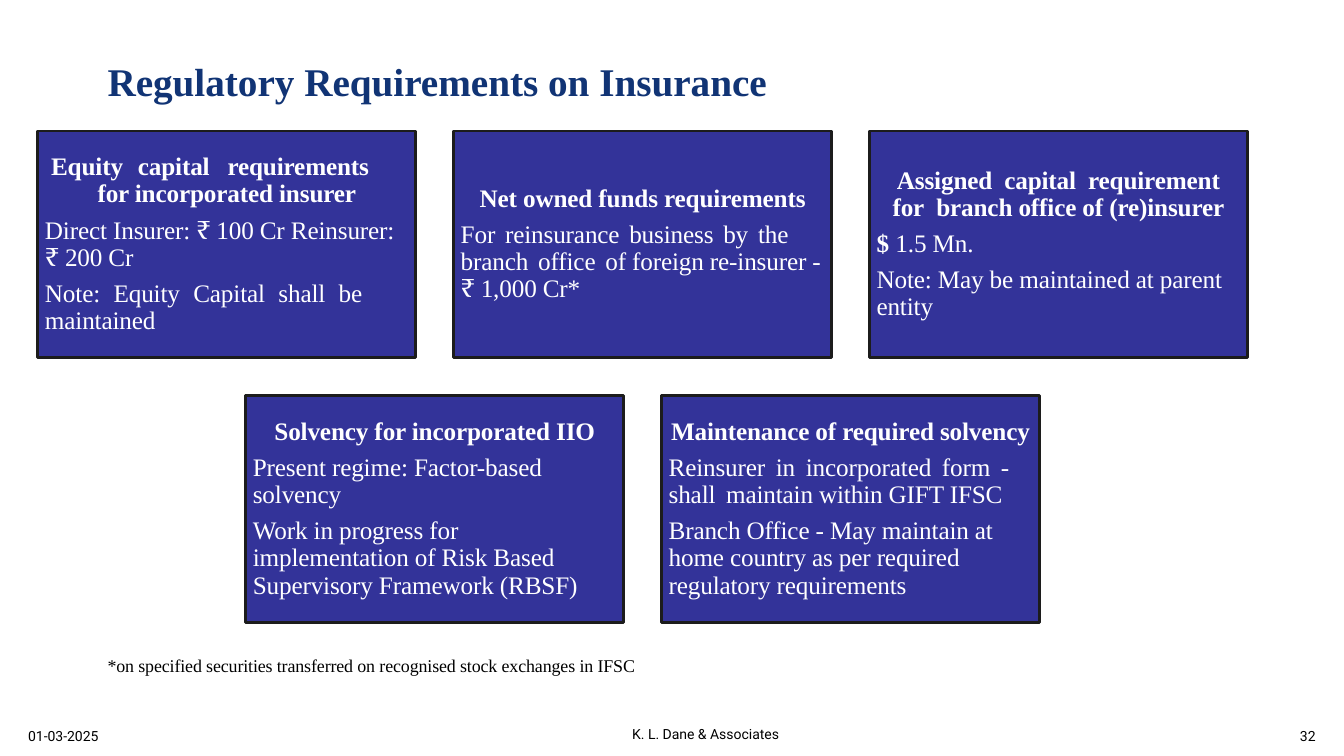
from dataclasses import dataclass

from pptx import Presentation
from pptx.dml.color import RGBColor
from pptx.enum.shapes import MSO_SHAPE
from pptx.enum.text import MSO_ANCHOR, PP_ALIGN
from pptx.util import Pt

LEFT, CENTER, RIGHT = PP_ALIGN.LEFT, PP_ALIGN.CENTER, PP_ALIGN.RIGHT
TOP, MIDDLE, BOTTOM = MSO_ANCHOR.TOP, MSO_ANCHOR.MIDDLE, MSO_ANCHOR.BOTTOM
RECTANGLE = MSO_SHAPE.RECTANGLE


@dataclass(frozen=True)
class Theme:
    """Colours, fonts and type sizes of the slide."""
    navy: str = "113475"
    card: str = "333399"
    border: str = "1C1C1C"
    white: str = "FFFFFF"
    black: str = "000000"
    serif: str = "Times New Roman"
    sans: str = "Roboto"
    title_size: float = 28
    card_size: float = 18
    note_size: float = 12.8
    footer_size: float = 10


@dataclass(frozen=True)
class Entry:
    """A card paragraph: bold lead, loosely spaced words, then plain words."""
    text: str = ""
    loose: str = ""
    gap: float = 0
    lead: str = ""
    tabs: tuple = ()


CARD_ROWS = [
    [
        [Entry("for incorporated insurer", "Equity\tcapital\trequirements\t", tabs=(62, 126, 251)),
         Entry("Direct Insurer: ₹ 100 Cr Reinsurer: ₹ 200 Cr"),
         Entry("maintained", "Note: Equity Capital shall be ", 5)],
        [Entry("Net owned funds requirements"),
         Entry("of foreign re-insurer - ₹ 1,000 Cr*",
               "For reinsurance business by the branch office ", 2.4)],
        [Entry("branch office of (re)insurer", "Assigned capital requirement for ", 4),
         Entry("1.5 Mn.", lead="$ "),
         Entry("Note: May be maintained at parent entity")],
    ],
    [
        [Entry("Solvency for incorporated IIO"),
         Entry("Present regime: Factor-based solvency"),
         Entry("Work in progress for implementation of Risk Based Supervisory Framework (RBSF)")],
        [Entry("Maintenance of required solvency"),
         Entry("maintain within GIFT IFSC", "Reinsurer in incorporated form - shall ", 3),
         Entry("Branch Office - May maintain at home country as per required "
               "regulatory requirements")],
    ],
]
CARD_WIDTH, CARD_HEIGHT, CARD_GAP = 270, 162, 27
CARDS_LEFT, CARDS_TOP = 27, 93.6


def add_text(paragraph, text, *, font, size, color, bold=False, tracking=0):
    """Append a formatted run to the paragraph."""
    run = paragraph.add_run()
    run.text = text
    run.font.name = font
    run.font.size = Pt(size)
    run.font.bold = bold
    run.font.color.rgb = RGBColor.from_string(color)
    if tracking:
        run._r.get_or_add_rPr().set("spc", str(round(tracking * 100)))


def set_tabs(paragraph, positions):
    """Give the paragraph left tab stops at the positions."""
    properties = paragraph._p.get_or_add_pPr()
    stops = properties.makeelement(properties.tag.replace("pPr", "tabLst"), {})
    for position in positions:
        stop = stops.makeelement(properties.tag.replace("pPr", "tab"),
                                 {"pos": str(Pt(position)), "algn": "l"})
        stops.append(stop)
    properties.append(stops)


class SlideBuilder:
    """Draws the elements of one slide in one theme."""

    def __init__(self, slide, theme):
        """Keep the slide and its theme."""
        self.slide = slide
        self.theme = theme

    def label(self, text, box, *, align=LEFT, anchor=TOP, insets=(7.2, 3.6, 7.2, 3.6), **style):
        """Add a text box holding one paragraph."""
        frame = self.slide.shapes.add_textbox(*map(Pt, box)).text_frame
        frame.word_wrap = True
        frame.vertical_anchor = anchor
        self.inset(frame, insets)
        frame.paragraphs[0].alignment = align
        add_text(frame.paragraphs[0], text, **style)

    def inset(self, frame, insets):
        """Set the left, top, right and bottom margins of a frame."""
        (frame.margin_left, frame.margin_top,
         frame.margin_right, frame.margin_bottom) = map(Pt, insets)

    def card(self, entries, left, top):
        """Add a card with a bold heading and its details."""
        card = self.slide.shapes.add_shape(
            RECTANGLE, Pt(left), Pt(top), Pt(CARD_WIDTH), Pt(CARD_HEIGHT))
        card.shadow.inherit = False
        card.fill.solid()
        card.fill.fore_color.rgb = RGBColor.from_string(self.theme.card)
        card.line.color.rgb = RGBColor.from_string(self.theme.border)
        card.line.width = Pt(2)
        frame = card.text_frame
        frame.word_wrap = True
        frame.vertical_anchor = MIDDLE
        self.inset(frame, (5.1,) * 4)
        for index, entry in enumerate(entries):
            paragraph = frame.paragraphs[0] if index == 0 else frame.add_paragraph()
            self.entry(paragraph, entry, heading=index == 0)

    def entry(self, paragraph, entry, heading):
        """Fill one paragraph of a card."""
        paragraph.alignment = CENTER if heading else LEFT
        paragraph.line_spacing = 0.9
        paragraph.space_after = Pt(6.3)
        if entry.tabs:
            set_tabs(paragraph, entry.tabs)
        style = dict(font=self.theme.serif, size=self.theme.card_size, color=self.theme.white)
        if entry.lead:
            add_text(paragraph, entry.lead, bold=True, **style)
        for word in entry.loose.split(" ")[:-1] if entry.gap else filter(None, [entry.loose]):
            add_text(paragraph, word, bold=heading, tracking=-0.1, **style)
            if entry.gap:
                add_text(paragraph, " ", bold=heading, tracking=entry.gap, **style)
        add_text(paragraph, entry.text, bold=heading, tracking=-0.1, **style)


def main():
    """Build the slide and save it."""
    deck = Presentation()
    deck.slide_width, deck.slide_height = Pt(960), Pt(540)
    theme = Theme()
    builder = SlideBuilder(deck.slides.add_slide(deck.slide_layouts[6]), theme)

    builder.label("Regulatory Requirements on Insurance", (75.6, 38.2, 563, 36),
                  insets=(1.2, 3, 0, 0), font=theme.serif, size=theme.title_size,
                  color=theme.navy, bold=True)
    builder.label("*on specified securities transferred on recognised stock exchanges in IFSC",
                  (75.6, 465.1, 512.6, 20), insets=(1.2, 2.7, 0, 0), font=theme.serif,
                  size=theme.note_size, color=theme.black, tracking=-0.1)

    pitch = CARD_WIDTH + CARD_GAP
    for row, cards in enumerate(CARD_ROWS):
        row_left = CARDS_LEFT + (len(CARD_ROWS[0]) - len(cards)) * pitch / 2
        for column, entries in enumerate(cards):
            builder.card(entries, row_left + column * pitch,
                         CARDS_TOP + row * (CARD_HEIGHT + CARD_GAP))

    footers = [
        ("01-03-2025", (13, 499, 70, 36), LEFT),
        ("K. L. Dane & Associates", (352, 498, 304, 36), CENTER),
        ("32", (912.2, 499, 34.6, 36), RIGHT),
    ]
    for text, box, align in footers:
        builder.label(text, box, align=align, anchor=BOTTOM, font=theme.sans,
                      size=theme.footer_size, color=theme.black)

    deck.save("out.pptx")


if __name__ == "__main__":
    main()
